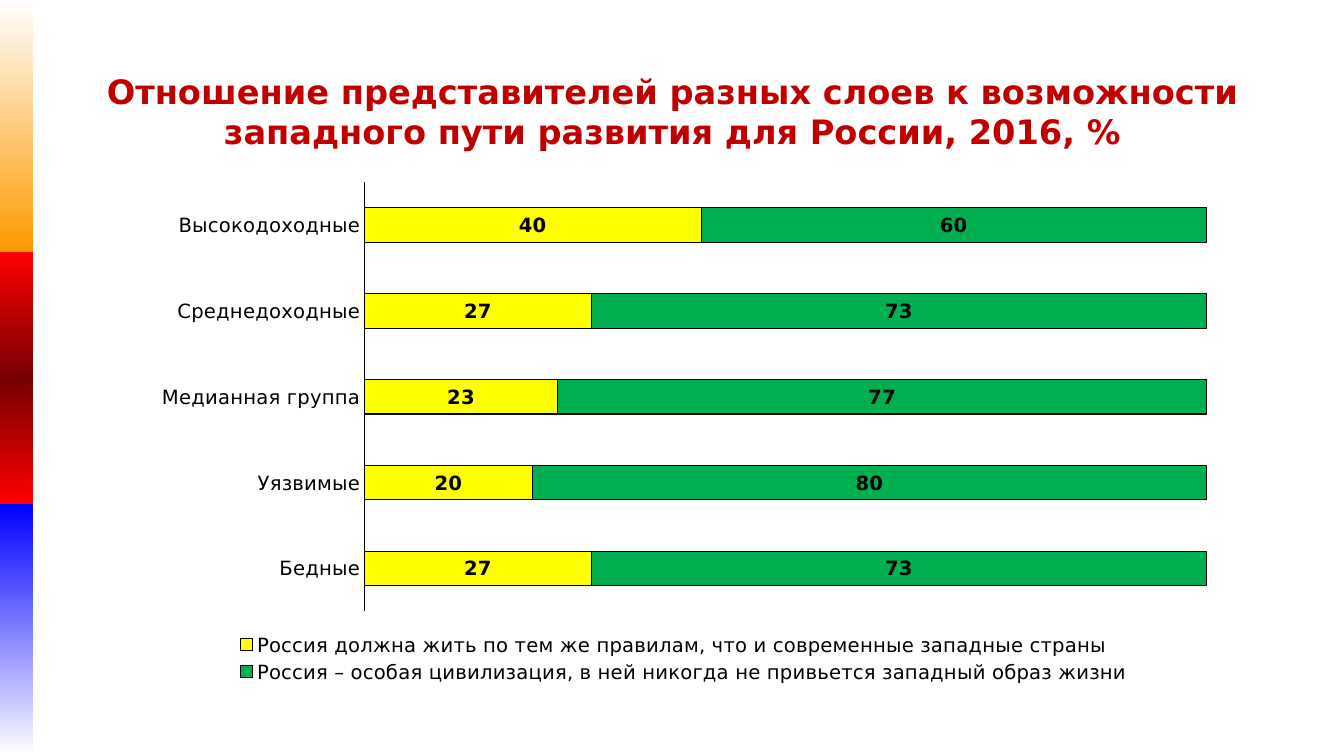
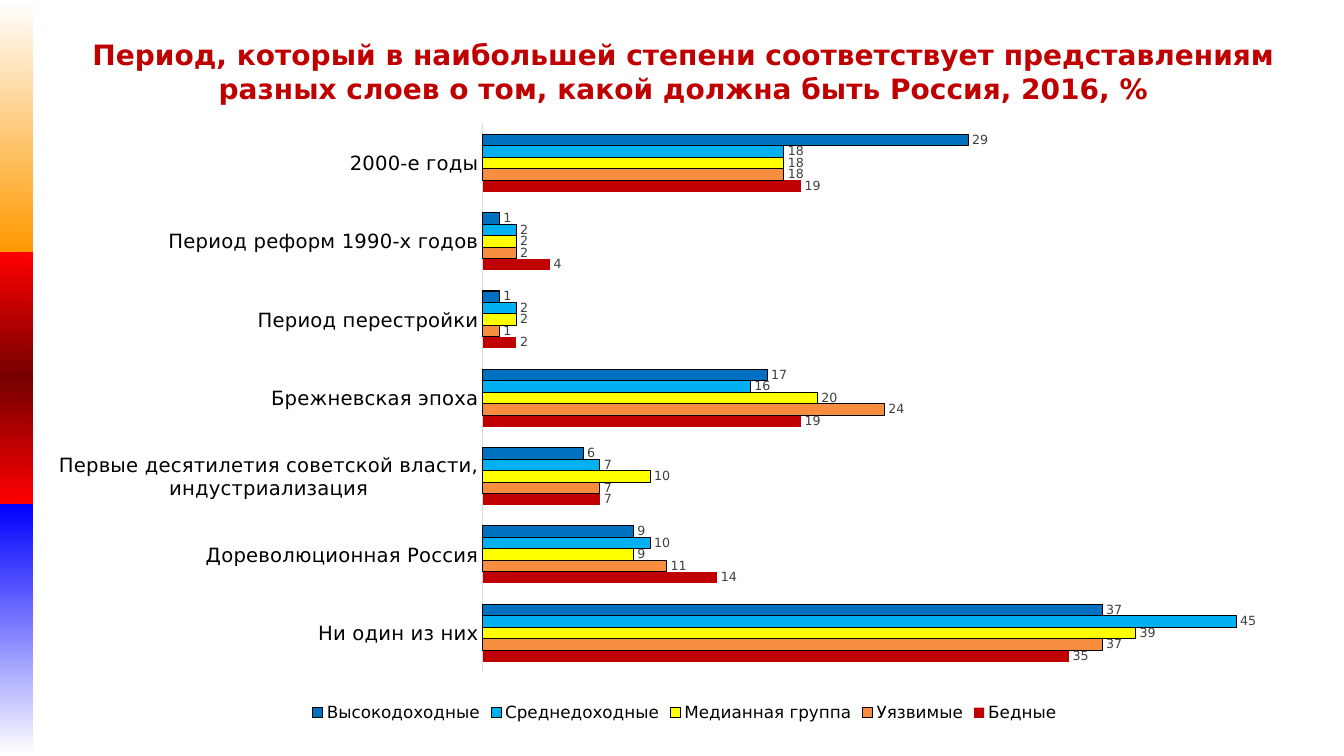
from dataclasses import dataclass
from typing import NamedTuple

from lxml.etree import SubElement as Sub
from pptx import Presentation
from pptx.chart.chart import Chart
from pptx.chart.data import CategoryChartData as Data
from pptx.dml.color import RGBColor
from pptx.enum.chart import XL_CHART_TYPE as Kind
from pptx.enum.chart import XL_LABEL_POSITION as Spot
from pptx.enum.chart import XL_LEGEND_POSITION as Side
from pptx.enum.chart import XL_TICK_MARK as Tick
from pptx.enum.shapes import MSO_SHAPE as Form
from pptx.enum.text import MSO_ANCHOR as Anchor
from pptx.enum.text import MSO_AUTO_SIZE as Fit
from pptx.enum.text import PP_ALIGN as Align
from pptx.oxml.ns import qn
from pptx.slide import Slide
from pptx.util import Inches, Pt

FACE = "DejaVu Sans"
BLACK, RED, YELLOW = "000000", "C00000", "FFFF00"
BANDS = [
    ("FFFFFF", "FF9900"),
    ("FF0000", "760000", "FF0000"),
    ("0000FF", "FFFFFF"),
]


class Box(NamedTuple):
    left: float
    top: float
    width: float
    height: float


class Row(NamedTuple):
    name: str
    vals: tuple[int, ...]
    hue: str
    edge: bool = True


@dataclass
class Page:
    title: str
    head: Box
    size: int
    kind: Kind
    area: Box
    plot: Box
    cats: list[str]
    rows: list[Row]
    gap: int
    axis: str
    key: int
    mark: int
    ink: str
    bold: bool
    spot: Spot
    top: int | None = None


PAGES = [
    Page(
        title="Отношение представителей разных слоев к возможности "
        "западного пути развития для России, 2016, %",
        head=Box(0.67, 0.3, 12, 1.25),
        size=24,
        kind=Kind.BAR_STACKED_100,
        area=Box(1.39, 1.7, 10.79, 5.12),
        plot=Box(0.206, 0.021, 0.774, 0.832),
        cats=["Бедные", "Уязвимые", "Медианная группа", "Среднедоходные",
              "Высокодоходные"],
        rows=[
            Row("Россия должна жить по тем же правилам, что и современные "
                "западные страны", (27, 20, 23, 27, 40), YELLOW),
            Row("Россия – особая цивилизация, в ней никогда не привьется "
                "западный образ жизни", (73, 80, 77, 73, 60), "00B050"),
        ],
        gap=150, axis=BLACK, key=14, mark=14, ink=BLACK, bold=True,
        spot=Spot.CENTER,
    ),
    Page(
        title="Период, который в наибольшей степени соответствует "
        "представлениям разных слоев о том, какой должна быть Россия, 2016, %",
        head=Box(0.78, 0.4, 12, 0.69),
        size=20,
        kind=Kind.BAR_CLUSTERED,
        area=Box(0.45, 1.07, 12.68, 6.14),
        plot=Box(0.342, 0.026, 0.655, 0.886),
        cats=["Ни один из них", "Дореволюционная Россия",
              "Первые десятилетия советской власти, индустриализация",
              "Брежневская эпоха", "Период перестройки",
              "Период реформ 1990-х годов", "2000-е годы"],
        rows=[
            Row("Бедные", (35, 14, 7, 19, 2, 4, 19), RED, False),
            Row("Уязвимые", (37, 11, 7, 24, 1, 2, 18), "F78E3F"),
            Row("Медианная группа", (39, 9, 10, 20, 2, 2, 18), YELLOW),
            Row("Среднедоходные", (45, 10, 7, 16, 2, 2, 18), "00B0F0"),
            Row("Высокодоходные", (37, 9, 6, 17, 1, 1, 29), "0070C0"),
        ],
        gap=182, axis="D9D9D9", key=12, mark=9, ink="404040", bold=False,
        spot=Spot.OUTSIDE_END, top=50,
    ),
]


def paint(color, tint: str) -> None:
    color.rgb = RGBColor.from_string(tint)


def style(font, size: int, tint: str = BLACK, bold: bool = False) -> None:
    font.name = FACE
    font.size = Pt(size)
    font.bold = bold
    paint(font.color, tint)


def place(box: Box) -> list[int]:
    return [Inches(side) for side in box]


def stroke(line, tint: str) -> None:
    paint(line.color, tint)
    line.width = Pt(0.75)


def add_bands(slide: Slide) -> None:
    tree = slide.slide_layout.slide_master.shapes.element
    for row, tints in enumerate(BANDS):
        band = slide.shapes.add_shape(
            Form.RECTANGLE, *place(Box(0, 2.5 * row, 0.33, 2.5)))
        band.shadow.inherit = False
        band.line.fill.background()
        band.fill.gradient()
        band.fill.gradient_angle = 270
        stops = next(band.element.iter(qn("a:gsLst")))
        for stop in list(stops):
            stops.remove(stop)
        for step, tint in enumerate(tints):
            spot = 100000 * step // (len(tints) - 1)
            stop = Sub(stops, qn("a:gs"), pos=str(spot))
            Sub(stop, qn("a:srgbClr"), val=tint)
        tree.insert(2 + row, band.element)


def add_title(slide: Slide, page: Page) -> None:
    title = slide.shapes.title
    title.left, title.top, title.width, title.height = place(page.head)
    frame = title.text_frame
    frame.text = page.title
    frame.auto_size = Fit.NONE
    frame.vertical_anchor = Anchor.BOTTOM
    line = frame.paragraphs[0]
    line.alignment = Align.CENTER
    style(line.font, page.size, RED, True)


def set_plot(chart: Chart, box: Box) -> None:
    area = next(chart.element.iter(qn("c:plotArea")))
    for old in area.findall(qn("c:layout")):
        area.remove(old)
    layout = Sub(area, qn("c:layout"))
    area.insert(0, layout)
    inner = Sub(layout, qn("c:manualLayout"))
    parts = [("layoutTarget", "inner"), ("xMode", "edge"), ("yMode", "edge")]
    parts += zip("xywh", map(str, box))
    for tag, val in parts:
        Sub(inner, qn(f"c:{tag}"), val=val)


def add_chart(slide: Slide, page: Page) -> None:
    data = Data(number_format="0")
    data.categories = page.cats
    for row in page.rows:
        data.add_series(row.name, row.vals)
    chart = slide.shapes.add_chart(page.kind, *place(page.area), data).chart
    style(chart.font, 10)
    chart.has_title = False
    chart.has_legend = True
    chart.legend.position = Side.BOTTOM
    chart.legend.include_in_layout = False
    style(chart.legend.font, page.key)

    cats, vals = chart.category_axis, chart.value_axis
    cats.major_tick_mark = cats.minor_tick_mark = Tick.NONE
    style(cats.tick_labels.font, 14)
    stroke(cats.format.line, page.axis)
    vals.visible = vals.has_major_gridlines = False
    if page.top:
        vals.minimum_scale, vals.maximum_scale = 0, page.top

    plot = chart.plots[0]
    plot.gap_width = page.gap
    plot.vary_by_categories = False
    for bar, row in zip(plot.series, page.rows):
        bar.format.fill.solid()
        paint(bar.format.fill.fore_color, row.hue)
        if row.edge:
            stroke(bar.format.line, BLACK)
        else:
            bar.format.line.fill.background()
        marks = bar.data_labels
        marks.show_value = True
        marks.number_format = "0"
        marks.number_format_is_linked = False
        marks.position = page.spot
        style(marks.font, page.mark, page.ink, page.bold)
    set_plot(chart, page.plot)


def main() -> None:
    deck = Presentation()
    deck.slide_width, deck.slide_height = Inches(13.33), Inches(7.5)
    for page in PAGES:
        slide = deck.slides.add_slide(deck.slide_layouts[5])
        add_title(slide, page)
        add_chart(slide, page)
    add_bands(deck.slides[0])
    deck.save("out.pptx")


if __name__ == "__main__":
    main()
